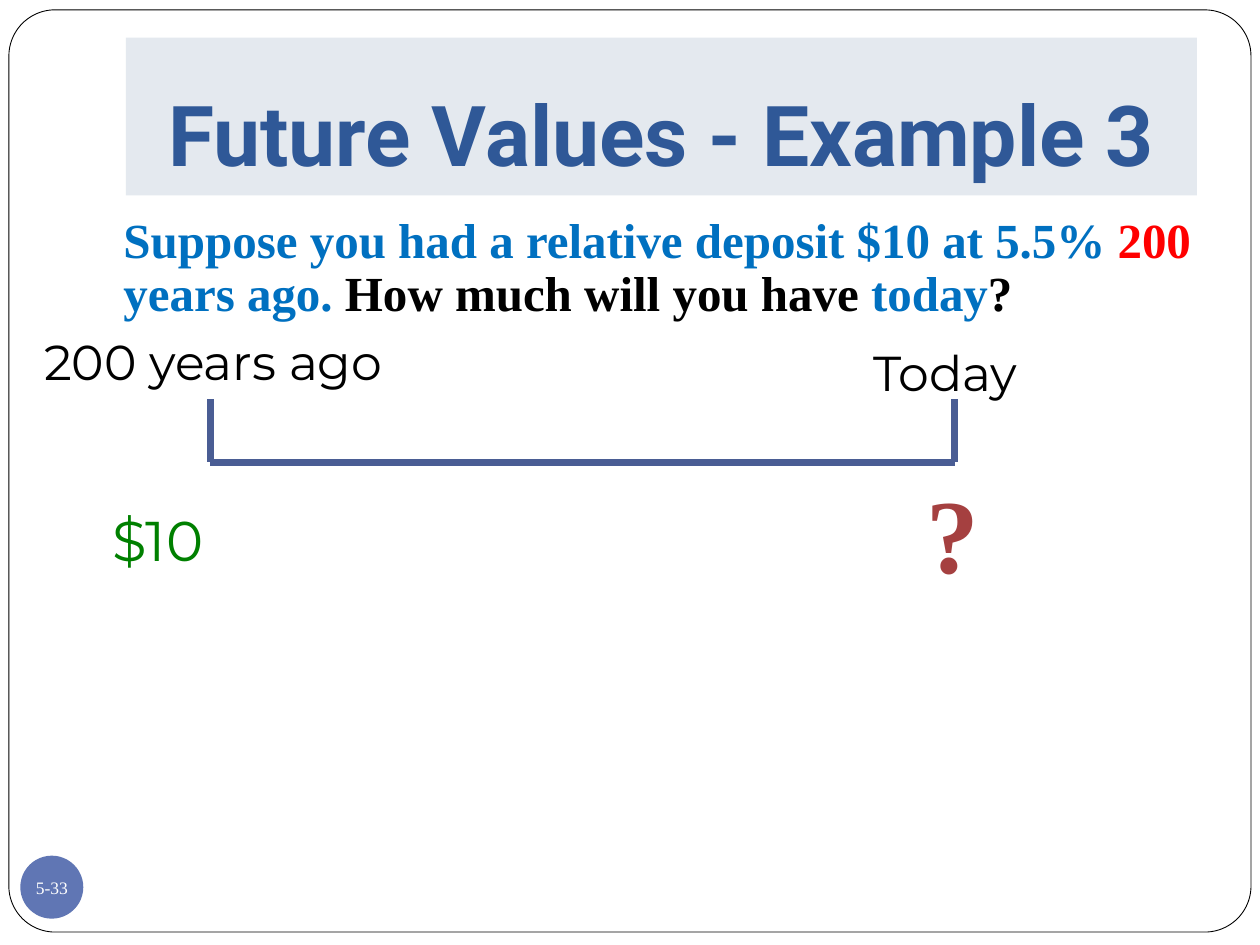
from lxml.etree import SubElement
from pptx import Presentation
from pptx.dml.color import RGBColor as Rgb
from pptx.enum.shapes import MSO_CONNECTOR as Link, MSO_SHAPE as Shape
from pptx.enum.text import MSO_ANCHOR as Anchor, PP_ALIGN as Align
from pptx.oxml.ns import qn
from pptx.util import Cm, Pt

INK = {
    "white": "FFFFFF", "black": "000000", "badge": "6076B4",
    "band": "E4E9EF", "title": "2F5897", "blue": "0070C0",
    "red": "FF0000", "line": "4A5D94", "green": "008000", "mark": "A54040",
}
SERIF = "Times New Roman"


def style(run, size, face, ink, bold=False):
    font = run.font
    font.size, font.name, font.bold = Pt(size), face, bold
    font.color.rgb = Rgb.from_string(INK[ink])


def block(kind, box, fill):
    shape = slide.shapes.add_shape(kind, *map(Cm, box))
    shape.shadow.inherit = False
    shape.fill.solid()
    shape.fill.fore_color.rgb = Rgb.from_string(INK[fill])
    shape.line.fill.background()
    return shape


deck = Presentation()
deck.slide_width, deck.slide_height = Cm(25.4), Cm(19.05)
slide = deck.slides.add_slide(deck.slide_layouts[6])

frame = block(Shape.ROUNDED_RECTANGLE, (0.18, 0.2, 25.04, 18.59), "white")
frame.adjustments[0] = 0.05
frame.line.color.rgb = Rgb.from_string(INK["black"])
frame.line.width = Pt(0.5)

badge = block(Shape.OVAL, (0.41, 17.25, 1.27, 1.27), "badge")
text = badge.text_frame
text.margin_left = text.margin_right = text.margin_top = text.margin_bottom = 0
text.word_wrap = False
text.vertical_anchor = Anchor.MIDDLE
text.text = "5-33"
text.paragraphs[0].alignment = Align.CENTER
style(text.paragraphs[0].runs[0], 10, SERIF, "white")

title = block(Shape.RECTANGLE, (2.54, 0.76, 21.59, 3.18), "band")
text = title.text_frame
text.margin_bottom = Cm(0.25)
text.vertical_anchor = Anchor.BOTTOM
text.text = "Future Values - Example 3"
text.paragraphs[0].alignment = Align.CENTER
style(text.paragraphs[0].runs[0], 48, "Roboto", "title", True)

body = slide.shapes.add_textbox(Cm(2.24), Cm(4.24), Cm(22.73), Cm(2.5))
body.text_frame.word_wrap = True
para = body.text_frame.paragraphs[0]
para.line_spacing = 0.9
para.space_before = Pt(5.8)
for words, ink in [
    ("Suppose you had a relative deposit $10 at 5.5% ", "blue"),
    ("200", "red"),
    (" years ago.", "blue"),
    (" How much will you have ", "black"),
    ("today", "blue"),
    ("?", "black"),
]:
    run = para.add_run()
    run.text = words
    style(run, 28, SERIF, ink, True)

past, now, top, base = 4.24, 19.25, 8.05, 9.32
for ends in [(past, base, now, base), (past, top, past, base), (now, top, now, base)]:
    line = slide.shapes.add_connector(Link.STRAIGHT, *map(Cm, ends))
    line.line.color.rgb = Rgb.from_string(INK["line"])
    line.line.width = Pt(4)
    SubElement(line._element.spPr, qn("a:effectLst"))

for words, box, size, face, ink, bold, align in [
    ("200 years ago", (0.64, 6.55, 9.09, 1.45), 28, "Montserrat", "black", False, Align.LEFT),
    ("Today", (17.35, 6.78, 4.88, 1.45), 28, "Montserrat", "black", False, Align.LEFT),
    ("$10", (2.01, 10.06, 4.88, 1.63), 32, "Montserrat", "green", False, Align.LEFT),
    ("?", (18.42, 9.32, 1.5, 2.82), 60, SERIF, "mark", True, Align.CENTER),
]:
    label = slide.shapes.add_textbox(*map(Cm, box))
    label.text_frame.word_wrap = True
    label.text_frame.text = words
    para = label.text_frame.paragraphs[0]
    para.alignment = align
    style(para.runs[0], size, face, ink, bold)

deck.save("out.pptx")
